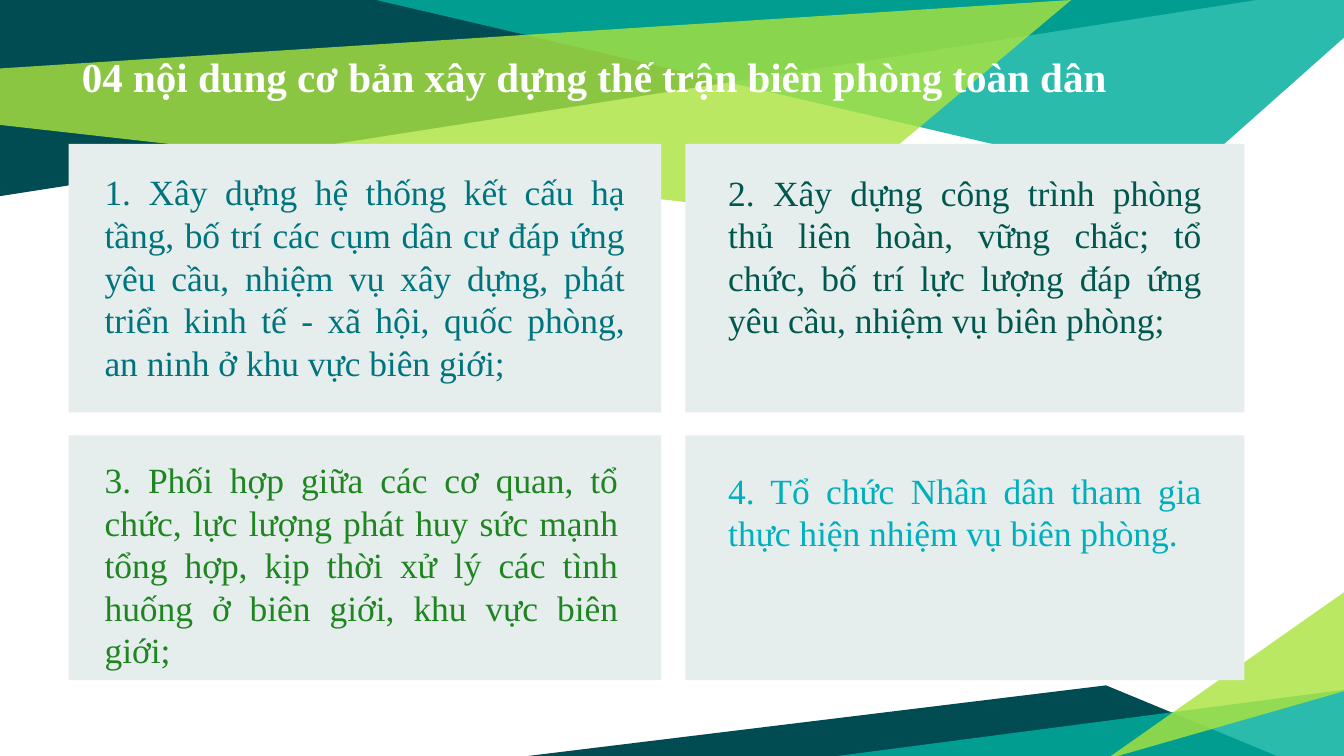
from dataclasses import dataclass

from lxml.etree import SubElement
from pptx import Presentation
from pptx.dml.color import RGBColor
from pptx.enum.shapes import MSO_SHAPE as Preset
from pptx.enum.text import MSO_ANCHOR as Anchor, MSO_AUTO_SIZE as AutoSize, PP_ALIGN as Align
from pptx.oxml.ns import qn
from pptx.slide import Slide
from pptx.text.text import TextFrame
from pptx.util import Inches, Pt

WIDTH = 10
HEIGHT = WIDTH * 9 / 16
UNITS_PER_INCH = 1000


@dataclass(frozen=True)
class Theme:
    font: str = "Times New Roman"
    title_size: int = 22
    body_size: int = 19
    white: str = "FFFFFF"
    navy: str = "004C52"
    teal: str = "00AE9D"
    lime: str = "ABE33F"
    panel: str = "E6EEED"
    card_colors: tuple[str, ...] = ("00747D", "00574E", "1E8520", "00AFBD")


@dataclass(frozen=True)
class Ribbon:
    points: tuple[tuple[float, float], ...]
    color: str
    opacity: int = 100


@dataclass(frozen=True)
class Span:
    """Extent of a grid column or row."""
    start: float
    size: float


@dataclass(frozen=True)
class Card:
    column: int
    row: int
    text: str
    text_top: float
    text_width: float
    text_height: float


THEME = Theme()
COLUMNS = (Span(0.51, 4.41), Span(5.1, 4.16))
ROWS = (Span(1.07, 2), Span(3.24, 1.82))
TEXT_INDENTS = (0.17, 0.22)

RIBBONS = (
    Ribbon(((0, 0), (0, 1.46), (9.35, 0)), THEME.navy),
    Ribbon(((2.8, 0), (8.75, 1.39), (WIDTH, 0.28), (WIDTH, 0)), THEME.teal, 83),
    Ribbon(((-0.01, 0.51), (0, 0.93), (6.05, 1.61), (7.97, 0)), THEME.lime, 81),
    Ribbon(((3.93, HEIGHT), (9.5, HEIGHT), (8.23, 5.1)), THEME.navy),
    Ribbon(((10.02, 5.13), (10.02, 5.65), (6.04, 5.65)), THEME.teal, 83),
    Ribbon(((10.01, 5.14), (10.01, 4.4), (8.23, 5.65)), THEME.lime, 81),
)

CARDS = (
    Card(0, 0, "1. Xây dựng hệ thống kết cấu hạ tầng, bố trí các cụm dân cư đáp ứng "
         "yêu cầu, nhiệm vụ xây dựng, phát triển kinh tế - xã hội, quốc phòng, "
         "an ninh ở khu vực biên giới;", 0.15, 4.07, 1.7),
    Card(1, 0, "2. Xây dựng công trình phòng thủ liên hoàn, vững chắc; tổ chức, bố trí "
         "lực lượng đáp ứng yêu cầu, nhiệm vụ biên phòng;", 0.15, 3.72, 1.38),
    Card(0, 1, "3. Phối hợp giữa các cơ quan, tổ chức, lực lượng phát huy sức mạnh "
         "tổng hợp, kịp thời xử lý các tình huống ở biên giới, khu vực biên giới;",
         0.12, 4.02, 1.7),
    Card(1, 1, "4. Tổ chức Nhân dân tham gia thực hiện nhiệm vụ biên phòng.",
         0.2, 3.72, 0.74),
)


def paint(shape, color: str, opacity: int = 100) -> None:
    shape.shadow.inherit = False
    shape.line.fill.background()
    shape.fill.solid()
    shape.fill.fore_color.rgb = RGBColor.from_string(color)
    if opacity < 100:
        tint = shape.fill._xPr.find(f".//{qn('a:srgbClr')}")
        SubElement(tint, qn("a:alpha"), val=str(opacity * 1000))


def write(frame: TextFrame, text: str, *, size: int, color: str, bold: bool = False,
          align: Align = Align.LEFT, auto_size: AutoSize = AutoSize.NONE) -> None:
    frame.word_wrap = True
    frame.auto_size = auto_size
    frame.vertical_anchor = Anchor.TOP
    paragraph = frame.paragraphs[0]
    paragraph.alignment = align
    run = paragraph.add_run()
    run.text = text
    run.font.name = THEME.font
    run.font.size = Pt(size)
    run.font.bold = bold
    run.font.color.rgb = RGBColor.from_string(color)


def draw_ribbon(slide: Slide, ribbon: Ribbon) -> None:
    # Freeform coordinates are whole numbers, so inches become fine units.
    first, *rest = [(round(x * UNITS_PER_INCH), round(y * UNITS_PER_INCH))
                    for x, y in ribbon.points]
    builder = slide.shapes.build_freeform(*first, scale=Inches(1) / UNITS_PER_INCH)
    builder.add_line_segments(rest, close=True)
    paint(builder.convert_to_shape(), ribbon.color, ribbon.opacity)


def draw_title(slide: Slide, text: str) -> None:
    title = slide.shapes.title
    title.left, title.top = Inches(0.51), Inches(0.28)
    title.width, title.height = Inches(7.92), Inches(0.59)
    frame = title.text_frame
    frame.margin_top = frame.margin_bottom = Inches(0.1)
    write(frame, text, size=THEME.title_size, color=THEME.white, bold=True)
    # The title belongs in front of the ribbons.
    slide.shapes._spTree.append(title._element)


def draw_panel(slide: Slide, column: Span, row: Span) -> None:
    panel = slide.shapes.add_shape(
        Preset.RECTANGLE, *map(Inches, (column.start, row.start, column.size, row.size)))
    paint(panel, THEME.panel)


def draw_card_text(slide: Slide, card: Card, color: str) -> None:
    left = COLUMNS[card.column].start + TEXT_INDENTS[card.column]
    top = ROWS[card.row].start + card.text_top
    box = slide.shapes.add_textbox(
        *map(Inches, (left, top, card.text_width, card.text_height)))
    write(box.text_frame, card.text, size=THEME.body_size, color=color,
          align=Align.JUSTIFY, auto_size=AutoSize.SHAPE_TO_FIT_TEXT)


def main() -> None:
    deck = Presentation()
    deck.slide_width, deck.slide_height = Inches(WIDTH), Inches(HEIGHT)
    slide = deck.slides.add_slide(deck.slide_layouts.get_by_name("Title Only"))

    for ribbon in RIBBONS:
        draw_ribbon(slide, ribbon)
    draw_title(slide, "04 nội dung cơ bản xây dựng thế trận biên phòng toàn dân")
    for row in ROWS:
        for column in COLUMNS:
            draw_panel(slide, column, row)
    for card, color in zip(CARDS, THEME.card_colors):
        draw_card_text(slide, card, color)

    deck.save("out.pptx")


if __name__ == "__main__":
    main()
